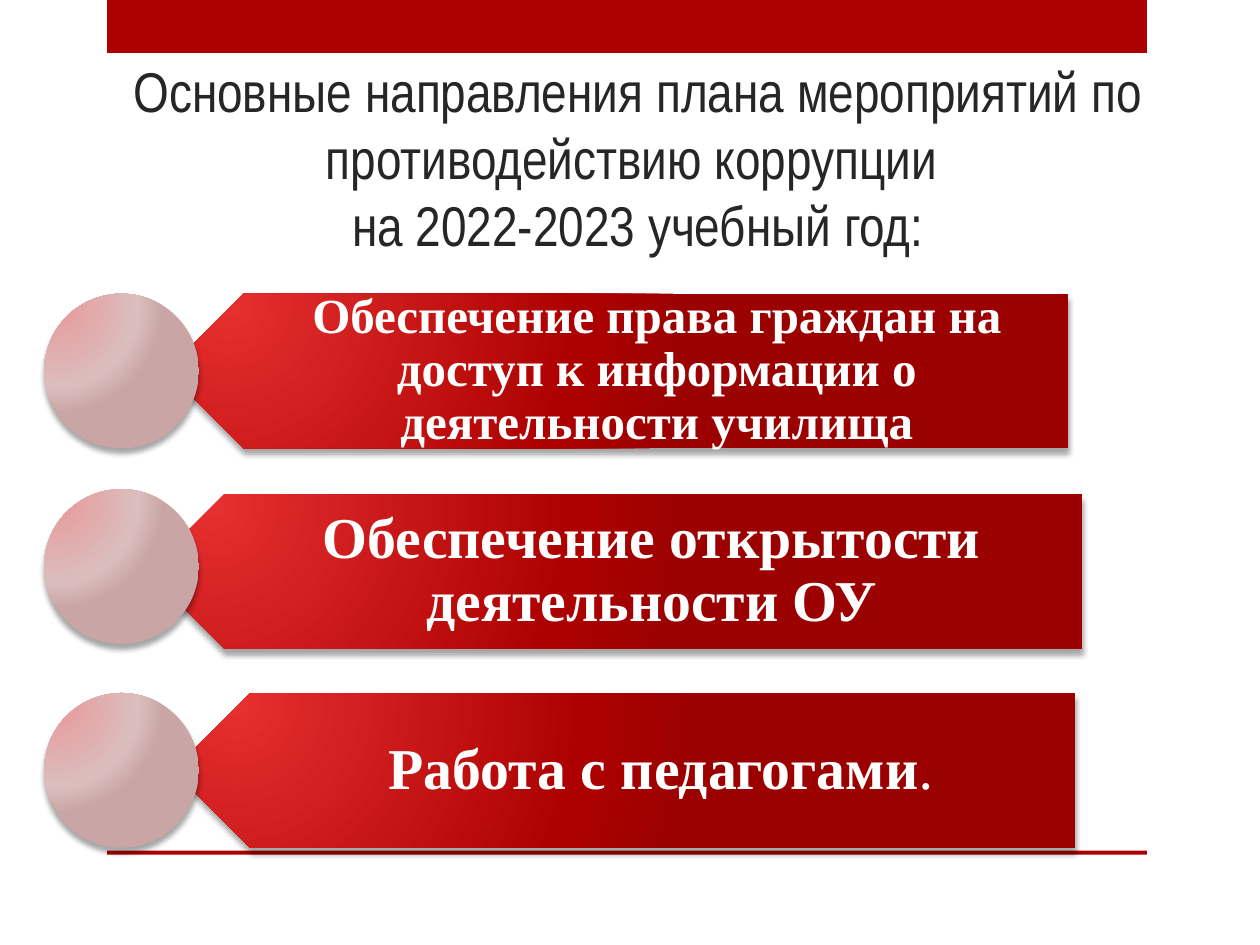
from copy import deepcopy
from lxml.etree import SubElement
from pptx import Presentation
from pptx.dml.color import RGBColor
from pptx.enum.shapes import MSO_SHAPE as Shape
from pptx.enum.text import MSO_ANCHOR as Anchor, MSO_AUTO_SIZE as AutoSize, PP_ALIGN as Align
from pptx.oxml import parse_xml
from pptx.oxml.ns import nsdecls, qn
from pptx.util import Cm, Pt


def write_text(shape, runs, size, font, color, bold=False, anchor=Anchor.MIDDLE,
               spacing=1.0, margins=(0.25, 0.13, 0.25, 0.13)):
    frame = shape.text_frame
    frame.word_wrap = True
    frame.auto_size = AutoSize.NONE
    frame.vertical_anchor = anchor
    frame.margin_left, frame.margin_top, frame.margin_right, frame.margin_bottom = map(Cm, margins)
    paragraph = frame.paragraphs[0]
    paragraph.alignment = Align.CENTER
    paragraph.line_spacing = spacing
    for text, is_bold in runs:
        for number, line in enumerate(text.split("\n")):
            if number:
                paragraph.add_line_break()
            run = paragraph.add_run()
            run.text = line
            run.font.size = Pt(size)
            run.font.name = font
            run.font.bold = is_bold
            run.font.color.rgb = RGBColor.from_string(color)
    for line_break in paragraph._p.findall(qn("a:br")):
        line_break.append(deepcopy(run.font._element))


def add_glossy_shape(kind, left, top, width, height, colors, rotation=0):
    shape = slide.shapes.add_shape(kind, Cm(left), Cm(top), Cm(width), Cm(height))
    shape.rotation = rotation
    shape.line.fill.background()
    stops = "".join(f'<a:gs pos="{position}"><a:srgbClr val="{color}"/></a:gs>'
                    for position, color in zip((0, 76000, 100000), colors))
    gradient = parse_xml(
        f'<a:gradFill {nsdecls("a")} rotWithShape="1"><a:gsLst>{stops}</a:gsLst>'
        '<a:path path="circle"><a:fillToRect l="15000" t="15000" r="100000" b="100000"/>'
        '</a:path></a:gradFill>')
    properties = shape._element.spPr
    properties.find(qn("a:prstGeom")).addnext(gradient)
    effects = SubElement(properties, qn("a:effectLst"))
    effects.append(parse_xml(
        f'<a:outerShdw {nsdecls("a")} blurRad="38100" dist="38100" dir="5400000" rotWithShape="0">'
        '<a:srgbClr val="000000"><a:alpha val="35000"/></a:srgbClr></a:outerShdw>'))


presentation = Presentation()
presentation.slide_width, presentation.slide_height = Cm(25.4), Cm(19.05)
slide = presentation.slides.add_slide(presentation.slide_layouts[5])

for top, height in ((0, 1.07), (17.15, 0.08)):
    bar = slide.shapes.add_shape(Shape.RECTANGLE, Cm(2.16), Cm(top), Cm(20.96), Cm(height))
    bar.shadow.inherit = False
    bar.fill.solid()
    bar.fill.fore_color.rgb = RGBColor.from_string("AD0101")
    bar.line.fill.background()

title = slide.shapes.title
title.left, title.top, title.width, title.height = Cm(1.5), Cm(1.93), Cm(22.73), Cm(3.4)
write_text(title, [("Основные направления плана мероприятий по противодействию коррупции \n"
                    "на 2022-2023 учебный год:", False)],
           size=32, font="Arial Narrow", color="262626", anchor=Anchor.BOTTOM)

row_height = 3.12
text_offset = 0.78
directions = [
    (3.35, 5.92, 18.19, 5.92, 28, (1.37, 0.3, 0.56, 0.3),
     [("Обеспечение права граждан на доступ к информации о деятельности училища", True)]),
    (2.97, 9.96, 18.85, 9.86, 33, (1.37, 0.36, 0.66, 0.36),
     [("Обеспечение открытости деятельности ОУ", True)]),
    (3.48, 13.97, 18.19, 13.97, 33, (1.37, 0.36, 0.66, 0.36),
     [("Работа с педагогами", True), (".", False)]),
]
for left, top, width, circle_top, size, margins, runs in directions:
    add_glossy_shape(Shape.PENTAGON, left, top, width, row_height,
                     ("E62F2F", "AD0101", "9C0101"), rotation=180)
    label = slide.shapes.add_textbox(Cm(left + text_offset), Cm(top),
                                     Cm(width - text_offset), Cm(row_height))
    write_text(label, runs, size=size, font="Times New Roman", color="FFFFFF",
               spacing=0.9, margins=margins)
    add_glossy_shape(Shape.OVAL, 0.89, circle_top, row_height, row_height,
                     ("E89999", "DBBDBD", "CAA5A5"))

presentation.save("out.pptx")
